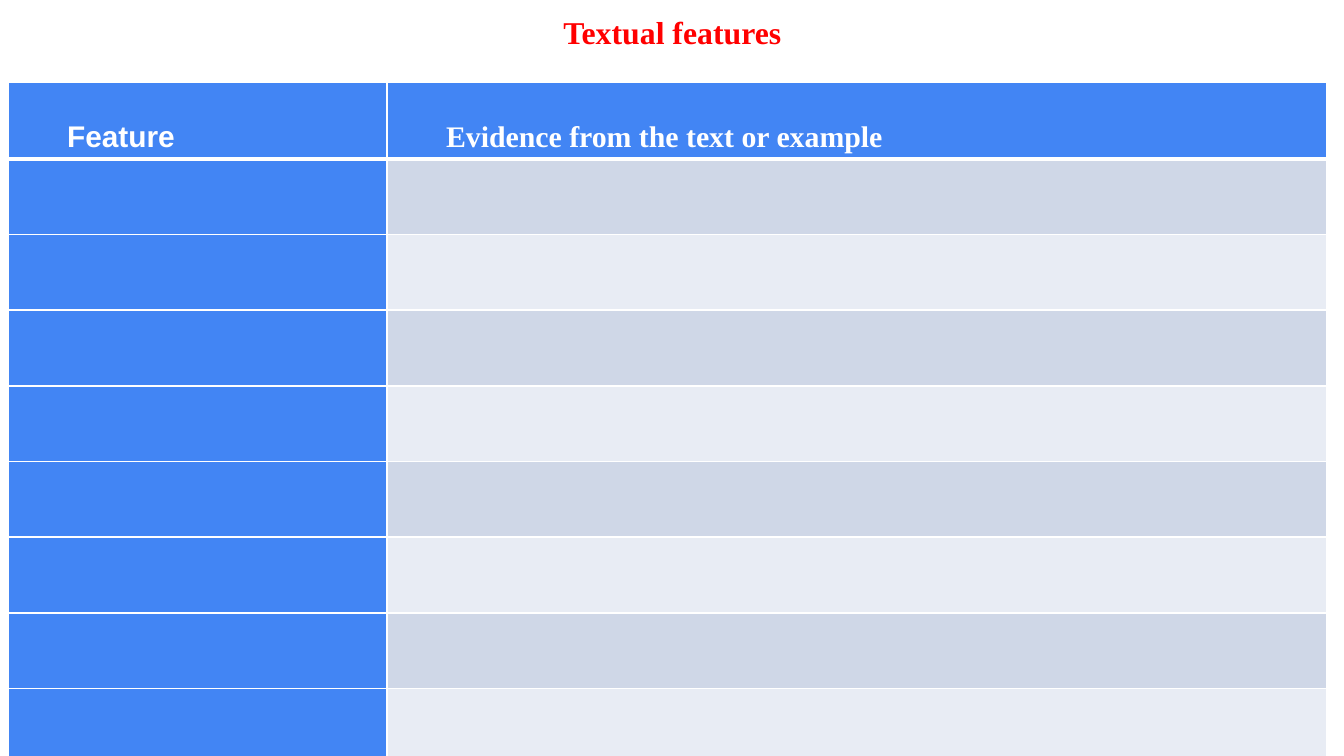
from dataclasses import dataclass

from lxml.etree import SubElement
from pptx import Presentation
from pptx.dml.color import RGBColor as RGB
from pptx.enum.text import MSO_AUTO_SIZE as Fit, PP_ALIGN as Align
from pptx.oxml.ns import qn
from pptx.util import Cm, Pt


@dataclass(frozen=True)
class Theme:
    white: str = "FFFFFF"
    red: str = "FF0000"
    blue: str = "4285F4"
    bands: tuple = ("CFD7E7", "E8ECF4")
    sans: str = "Arial"
    serif: str = "Times New Roman"
    title: int = 17
    head: int = 16


THEME = Theme()


def style(par, face, size, color):
    """Format the runs of a paragraph in bold."""
    for run in par.runs:
        font = run.font
        font.name, font.size, font.bold = face, Pt(size), True
        font.color.rgb = RGB.from_string(color)


def paint(cell, color, base):
    """Give a cell white borders and a solid fill."""
    props = cell._tc.get_or_add_tcPr()
    for side, width in (("L", 1), ("R", 1), ("T", 1), ("B", base)):
        line = SubElement(props, qn(f"a:ln{side}"), w=str(Pt(width)))
        fill = SubElement(line, qn("a:solidFill"))
        SubElement(fill, qn("a:srgbClr"), val=THEME.white)
    cell.fill.solid()
    cell.fill.fore_color.rgb = RGB.from_string(color)


def add_title(slide, left, top, width, height):
    box = slide.shapes.add_textbox(Cm(left), Cm(top), Cm(width), Cm(height))
    frame = box.text_frame
    frame.word_wrap = True
    frame.auto_size = Fit.SHAPE_TO_FIT_TEXT
    frame.margin_left = frame.margin_right = Cm(0.25)
    frame.margin_top = frame.margin_bottom = Cm(0.25)
    frame.text = "Textual features"
    par = frame.paragraphs[0]
    par.alignment = Align.CENTER
    style(par, THEME.serif, THEME.title, THEME.red)


def add_grid(slide, left, top, width, height):
    heads = (("Feature", THEME.sans),
             ("Evidence from the text or example", THEME.serif))
    count, first, side = 8, 1.3, 7.16
    grid = slide.shapes.add_table(count + 1, len(heads), Cm(left), Cm(top),
                                  Cm(width), Cm(height)).table
    grid.first_row = grid.horz_banding = False

    # Column widths and row heights
    for col, size in zip(grid.columns, (side, width - side)):
        col.width = Cm(size)
    for num, row in enumerate(grid.rows):
        row.height = Cm((height - first) / count if num else first)

    # Header row
    for num, (text, face) in enumerate(heads):
        cell = grid.cell(0, num)
        paint(cell, THEME.blue, 3)
        cell.margin_left = cell.margin_right = Cm(0.15)
        cell.margin_top = cell.margin_bottom = Cm(0.1)
        cell.text_frame.text = text
        par = cell.text_frame.paragraphs[0]
        par.line_spacing = 2.0
        par._p.get_or_add_pPr().set("indent", str(Cm(0.97)))
        style(par, face, THEME.head, THEME.white)

    # Empty rows to fill in, banded on the right
    for num in range(count):
        paint(grid.cell(num + 1, 0), THEME.blue, 1)
        paint(grid.cell(num + 1, 1), THEME.bands[num % 2], 1)


def main():
    deck = Presentation()
    deck.slide_width, deck.slide_height = Cm(25.4), Cm(14.29)
    slide = deck.slides.add_slide(deck.slide_layouts[6])
    add_grid(slide, 0.15, 1.55, 24.92, 12.74)
    add_title(slide, 9.09, 0, 7.24, 1.24)
    deck.save("out.pptx")


if __name__ == "__main__":
    main()
